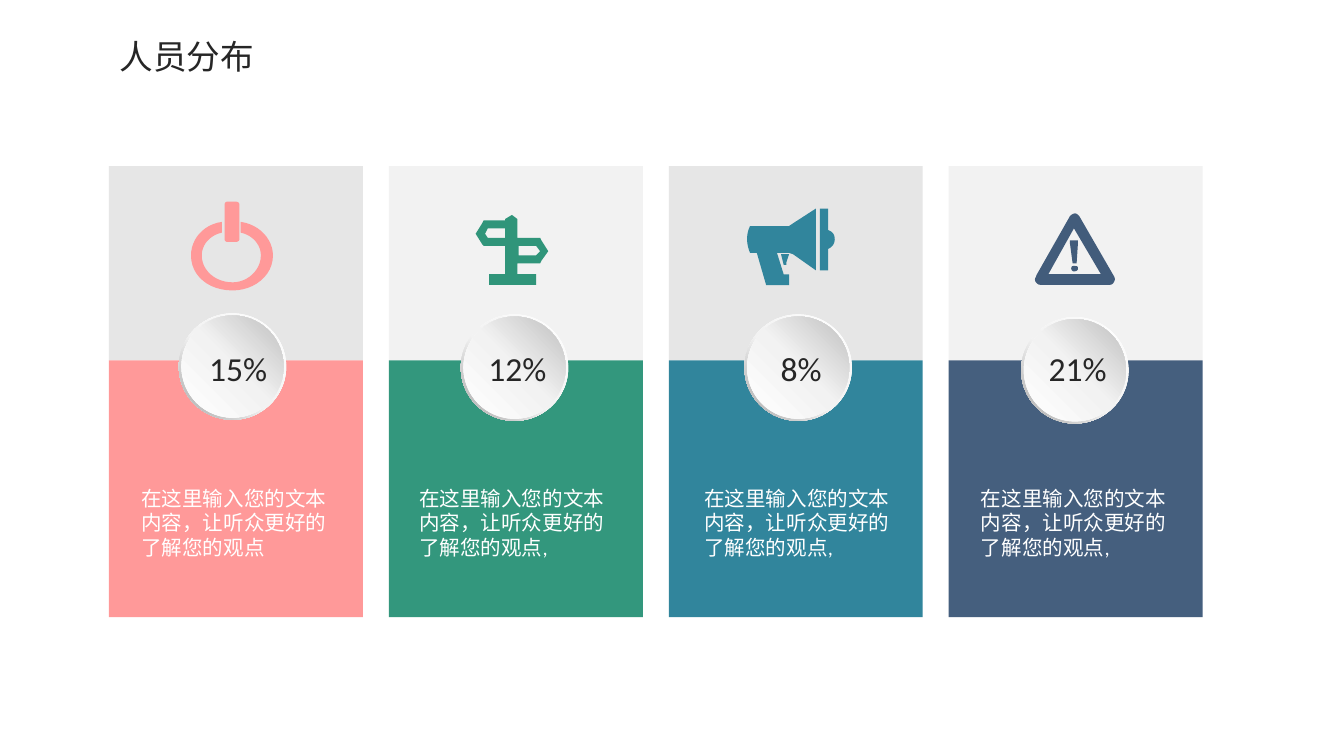
from dataclasses import dataclass

from lxml import etree
from pptx import Presentation
from pptx import util as u
from pptx.dml.color import RGBColor
from pptx.enum import shapes, text
from pptx.oxml.ns import qn

GRID = 0.0254  # centimetres in one step of the icon outlines
CARD_LEFT, CARD_PITCH, CARD_WIDTH = 2.06, 5.29, 4.8
CARD_TOP, HEAD_HEIGHT, BODY_HEIGHT = 3.14, 3.67, 4.85
MESSAGE = "在这里输入您的文本内容，让听众更好的了解您的观点"

# A step of two numbers is a line to a point, one of six is a cubic curve.
Step = tuple[float, ...]
Outline = list[Step]


@dataclass
class Icon:
    left: float
    top: float
    outlines: list[Outline]


@dataclass
class Card:
    percent: str
    message: str
    color: str
    alpha: int
    head_alpha: int
    badge: tuple[float, float]
    percent_left: float
    message_left: float
    icons: list[Icon]


POWER_RING = [
    (37, 15), (37, 23), (46, 25, 52, 32, 52, 40), (52, 51, 42, 60, 31, 60),
    (18, 60, 8, 51, 8, 40), (8, 32, 14, 25, 23, 23), (23, 15),
    (9, 17, 0, 28, 0, 40), (0, 55, 13, 66, 31, 66), (47, 66, 61, 55, 61, 40),
    (61, 28, 51, 17, 37, 15),
]
POWER_STEM = [
    (27, 0), (33, 0), (35, 0, 36, 1, 36, 2), (36, 28), (36, 29, 35, 30, 33, 30),
    (27, 30), (26, 30, 25, 29, 25, 28), (25, 2), (25, 1, 26, 0, 27, 0),
]
SIGNPOST = [
    [(22, 10), (9, 10), (7, 14), (9, 17), (22, 17)],
    [(31, 17), (48, 17), (49, 19), (54, 27), (49, 34), (48, 36), (31, 36),
     (31, 44), (45, 44), (45, 52), (10, 52), (10, 44), (22, 44), (22, 23),
     (6, 23), (5, 22), (0, 14), (5, 6), (6, 4), (22, 4), (22, 3), (27, 0), (31, 3)],
    [(45, 23), (32, 23), (32, 30), (45, 30), (48, 27)],
]
MEGAPHONE = [
    [(3, 13), (32, 13), (35, 11), (52, 0), (52, 46), (35, 34), (32, 33), (23, 33),
     (28, 49), (32, 49), (32, 57), (15, 57), (8, 33), (3, 33), (0, 26, 0, 19, 3, 13)],
    [(61, 16), (64, 17, 66, 19, 66, 23), (66, 26, 64, 29, 61, 30), (61, 46),
     (55, 46), (55, 0), (61, 0)],
    [(32, 34), (26, 34), (28, 42), (30, 42), (30, 40)],
]
WARNING = [
    [(33, 3), (59, 48), (60, 50, 59, 52, 58, 53), (57, 54, 56, 54, 55, 54), (4, 54),
     (2, 54, 0, 52, 0, 50), (0, 49, 1, 48, 1, 47), (26, 3), (28, 1, 30, 0, 32, 2)],
    [(26, 21), (26, 23), (28, 38), (31, 38), (32, 23), (32, 21)],
    [(29, 44), (31, 44, 32, 43, 32, 42), (32, 40, 31, 40, 29, 40),
     (28, 40, 27, 40, 27, 42), (27, 43, 28, 44, 29, 44)],
    [(29, 12), (10, 46), (49, 46)],
]

CARDS = [
    Card("15%", MESSAGE, "FF9999", 100, 100, (3.38, 5.92), 3.61, 2.67,
         [Icon(3.61, 3.81, [POWER_RING]), Icon(3.61, 3.81, [POWER_STEM])]),
    Card("12%", MESSAGE + ",", "007E5D", 80, 50, (8.71, 5.94), 8.89, 7.92,
         [Icon(8.99, 4.06, SIGNPOST)]),
    Card("8%", MESSAGE + ",", "31859C", 100, 100, (14.07, 5.94), 14.25, 13.31,
         [Icon(14.1, 3.94, MEGAPHONE)]),
    Card("21%", MESSAGE + ",", "17375E", 80, 50, (19.3, 5.99), 19.48, 18.54,
         [Icon(19.56, 4.01, WARNING)]),
]


def set_color(target, color: str) -> None:
    target.rgb = RGBColor.from_string(color)


def paint(shape, color: str, alpha: int = 100) -> None:
    """Give a plain fill, with alpha in percent, and no line or shadow."""
    shape.shadow.inherit = False
    shape.line.fill.background()
    shape.fill.solid()
    set_color(shape.fill.fore_color, color)
    if alpha < 100:
        color_element = shape._element.spPr.find(qn("a:solidFill"))[0]
        etree.SubElement(color_element, qn("a:alpha"), val=str(alpha * 1000))


def paint_gradient(shape, stops: list[tuple[int, str]], angle: int) -> None:
    shape.shadow.inherit = False
    shape.line.fill.background()
    shape.fill.gradient()
    shape.fill.gradient_angle = angle
    stop_list = shape._element.spPr.find(".//" + qn("a:gsLst"))
    stop_list.clear()
    for position, color in stops:
        stop = etree.SubElement(stop_list, qn("a:gs"), pos=str(position * 1000))
        etree.SubElement(stop, qn("a:srgbClr"), val=color)


def add_preset(slide, kind, left: float, top: float, width: float, height: float):
    return slide.shapes.add_shape(kind, *map(u.Cm, (left, top, width, height)))


def flatten(outline: Outline, pieces: int = 12) -> list[tuple[int, int]]:
    """Turn lines and curves into points on the slide's own scale."""
    points = [outline[0]]
    for step in outline[1:]:
        if len(step) == 2:
            points.append(step)
            continue
        controls = [points[-1], step[:2], step[2:4], step[4:]]
        for t in (i / pieces for i in range(1, pieces + 1)):
            weights = ((1 - t) ** 3, 3 * t * (1 - t) ** 2, 3 * t * t * (1 - t), t ** 3)
            points.append(tuple(sum(w * c[axis] for w, c in zip(weights, controls))
                                for axis in (0, 1)))
    return [(u.Cm(x * GRID), u.Cm(y * GRID)) for x, y in points]


def add_icon(slide, icon: Icon, color: str, alpha: int) -> None:
    contours = [flatten(outline) for outline in icon.outlines]
    builder = slide.shapes.build_freeform(*contours[0][0])
    for index, contour in enumerate(contours):
        if index:
            builder.move_to(*contour[0])
        builder.add_line_segments(contour[1:], close=True)
    paint(builder.convert_to_shape(u.Cm(icon.left), u.Cm(icon.top)), color, alpha)


def add_badge(slide, left: float, top: float) -> None:
    rim = add_preset(slide, shapes.MSO_SHAPE.DONUT, left, top, 2.03, 2.01)
    rim.adjustments[0] = 0.05
    paint_gradient(rim, [(0, "FFFFFF"), (55, "F2F2F2"), (100, "A6A6A6")], 225)
    disc = add_preset(slide, shapes.MSO_SHAPE.OVAL, left + 0.05, top + 0.04, 1.93, 1.93)
    paint_gradient(disc, [(0, "FFFFFF"), (51, "F2F2F2"), (100, "BFBFBF")], 45)


def write(shape, words: str, size: int, font: str, color: str,
          frame_format: dict, paragraph_format: dict) -> None:
    frame = shape.text_frame
    frame.text = words
    paragraph = frame.paragraphs[0]
    for target, values in ((frame, frame_format), (paragraph, paragraph_format),
                           (paragraph.runs[0].font, {"size": u.Pt(size), "name": font})):
        for name, value in values.items():
            setattr(target, name, value)
    set_color(paragraph.runs[0].font.color, color)


def add_label(slide, box: tuple[float, ...], words: str, size: int, color: str,
              paragraph_format: dict) -> None:
    label = slide.shapes.add_textbox(*map(u.Cm, box))
    frame_format = {"word_wrap": True, "vertical_anchor": text.MSO_ANCHOR.MIDDLE,
                    "margin_left": 0, "margin_right": 0,
                    "margin_top": 0, "margin_bottom": 0}
    write(label, words, size, "Calibri", color, frame_format, paragraph_format)


def add_card(slide, card: Card, left: float) -> None:
    rectangle = shapes.MSO_SHAPE.RECTANGLE
    head = add_preset(slide, rectangle, left, CARD_TOP, CARD_WIDTH, HEAD_HEIGHT)
    paint(head, "E6E6E6", card.head_alpha)
    body = add_preset(slide, rectangle, left, CARD_TOP + HEAD_HEIGHT,
                      CARD_WIDTH, BODY_HEIGHT)
    paint(body, card.color, card.alpha)
    for icon in card.icons:
        add_icon(slide, icon, card.color, card.alpha)
    add_badge(slide, *card.badge)
    add_label(slide, (card.percent_left, 6.48, 1.78, 1.04), card.percent, 18, "262626",
              {"alignment": text.PP_ALIGN.CENTER, "line_spacing": 0.9})
    add_label(slide, (card.message_left, 8.89, 3.58, 1.96), card.message, 11, "FFFFFF",
              {"alignment": text.PP_ALIGN.LEFT})


def main() -> None:
    presentation = Presentation()
    presentation.slide_width, presentation.slide_height = u.Cm(25.4), u.Cm(14.28)
    slide = presentation.slides.add_slide(presentation.slide_layouts[5])
    title = slide.shapes.title
    title.left, title.top, title.width, title.height = map(u.Cm, (2.01, 0.56, 3.07, 1.02))
    write(title, "人员分布", 18, "Noto Sans CJK SC", "262626",
          {"word_wrap": False, "vertical_anchor": text.MSO_ANCHOR.TOP,
           "auto_size": text.MSO_AUTO_SIZE.SHAPE_TO_FIT_TEXT},
          {"alignment": text.PP_ALIGN.LEFT})
    for index, card in enumerate(CARDS):
        add_card(slide, card, CARD_LEFT + index * CARD_PITCH)
    presentation.save("out.pptx")


if __name__ == "__main__":
    main()
